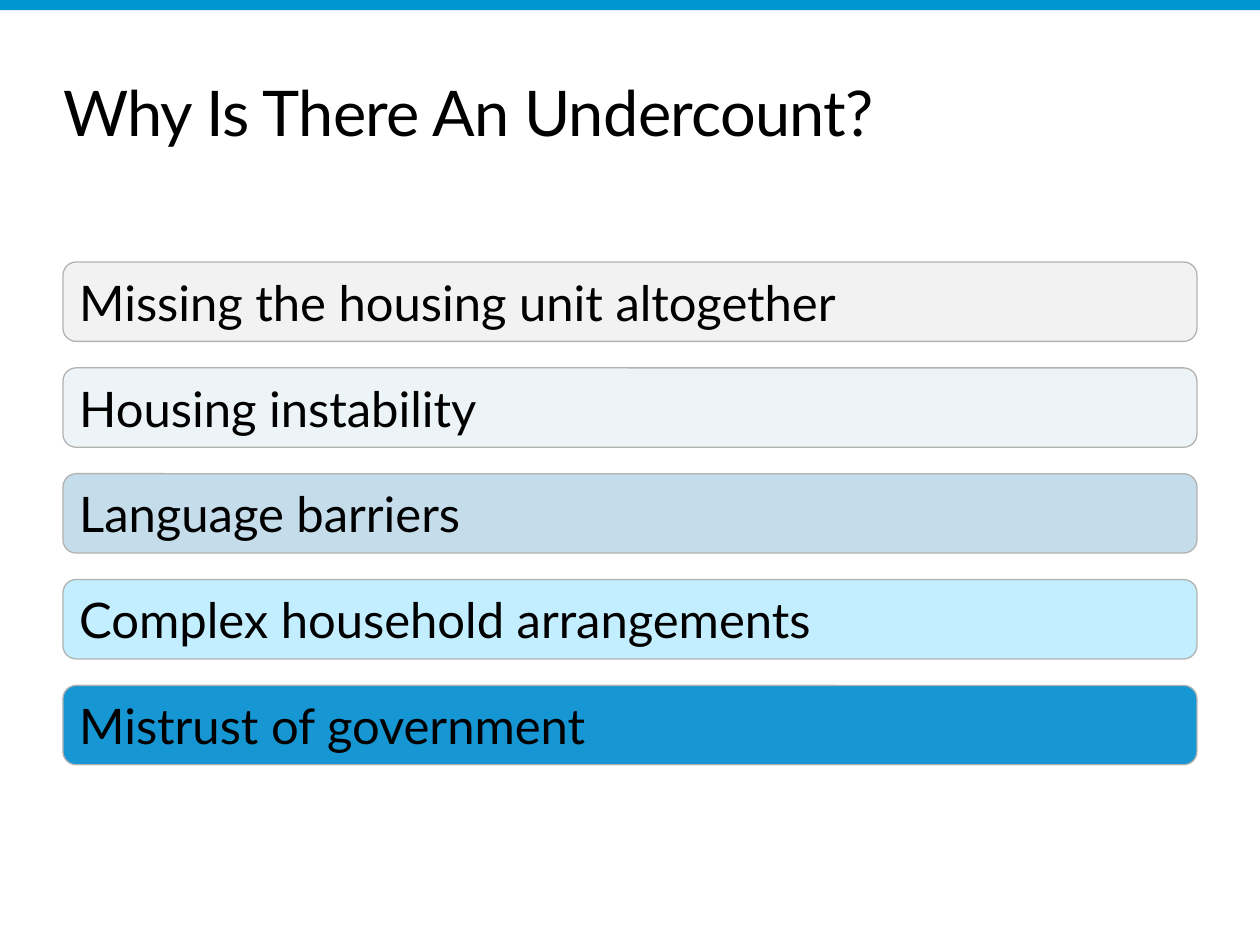
"""Build a slide listing five reasons for a census undercount."""
from dataclasses import dataclass

from pptx import Presentation
from pptx.dml.color import RGBColor as Color
from pptx.enum.shapes import MSO_SHAPE as Preset
from pptx.enum.text import MSO_ANCHOR as Anchor, MSO_AUTO_SIZE as Fit, PP_ALIGN as Align
from pptx.util import Inches, Pt


@dataclass(frozen=True)
class Theme:
    font: str = "Lato"
    text: str = "000000"
    band: str = "0096D2"
    outline: str = "B1B3B1"
    title_size: int = 36
    reason_size: int = 28


theme = Theme()


def write(shape, text, size, anchor, fit=Fit.NONE, after=0, spacing=None, inset=None):
    frame = shape.text_frame
    frame.word_wrap, frame.auto_size, frame.vertical_anchor = True, fit, anchor
    if inset is not None:
        frame.margin_left = frame.margin_right = Inches(inset)
        frame.margin_top = frame.margin_bottom = Inches(inset)
    para = frame.paragraphs[0]
    para.alignment, para.space_after = Align.LEFT, Pt(after)
    span = para.add_run()
    span.text = text
    span.font.name, span.font.size = theme.font, Pt(size)
    span.font.color.rgb = Color.from_string(theme.text)
    if spacing is not None:
        span.font._element.set("spc", str(round(spacing * 100)))


def add_box(page, preset, left, top, width, height, fill):
    box = page.shapes.add_shape(preset, left, top, width, height)
    box.shadow.inherit = False
    box.fill.solid()
    box.fill.fore_color.rgb = Color.from_string(fill)
    box.line.fill.background()
    return box


deck = Presentation()
deck.slide_width, deck.slide_height = Inches(10), Inches(7.5)
page = deck.slides.add_slide(deck.slide_layouts[5])

margin = int(deck.slide_width * 0.05)
content_width = deck.slide_width - 2 * margin
first_row, row_step, row_height = Inches(2.08), Inches(0.84), Inches(0.63)

add_box(page, Preset.RECTANGLE, 0, 0, deck.slide_width, Inches(0.08), theme.band)

title = page.shapes.title
title.left, title.top = margin, Inches(0.58)
title.width, title.height = content_width, Inches(0.62)
write(title, "Why Is There An Undercount?", theme.title_size, Anchor.TOP, spacing=-0.4, inset=0)

reasons = [
    ("Missing the housing unit altogether", "F2F2F2"),
    ("Housing instability", "ECF4F8"),
    ("Language barriers", "C5DDEB"),
    ("Complex household arrangements", "C3EEFF"),
    ("Mistrust of government", "1696D2"),
]
for row, (reason, fill) in enumerate(reasons):
    top = first_row + row * row_step
    box = add_box(page, Preset.ROUNDED_RECTANGLE, margin, top, content_width, row_height, fill)
    box.line.color.rgb = Color.from_string(theme.outline)
    box.line.width = Pt(0.75)
    write(box, reason, theme.reason_size, Anchor.MIDDLE, fit=Fit.SHAPE_TO_FIT_TEXT, after=12)

deck.save("out.pptx")
